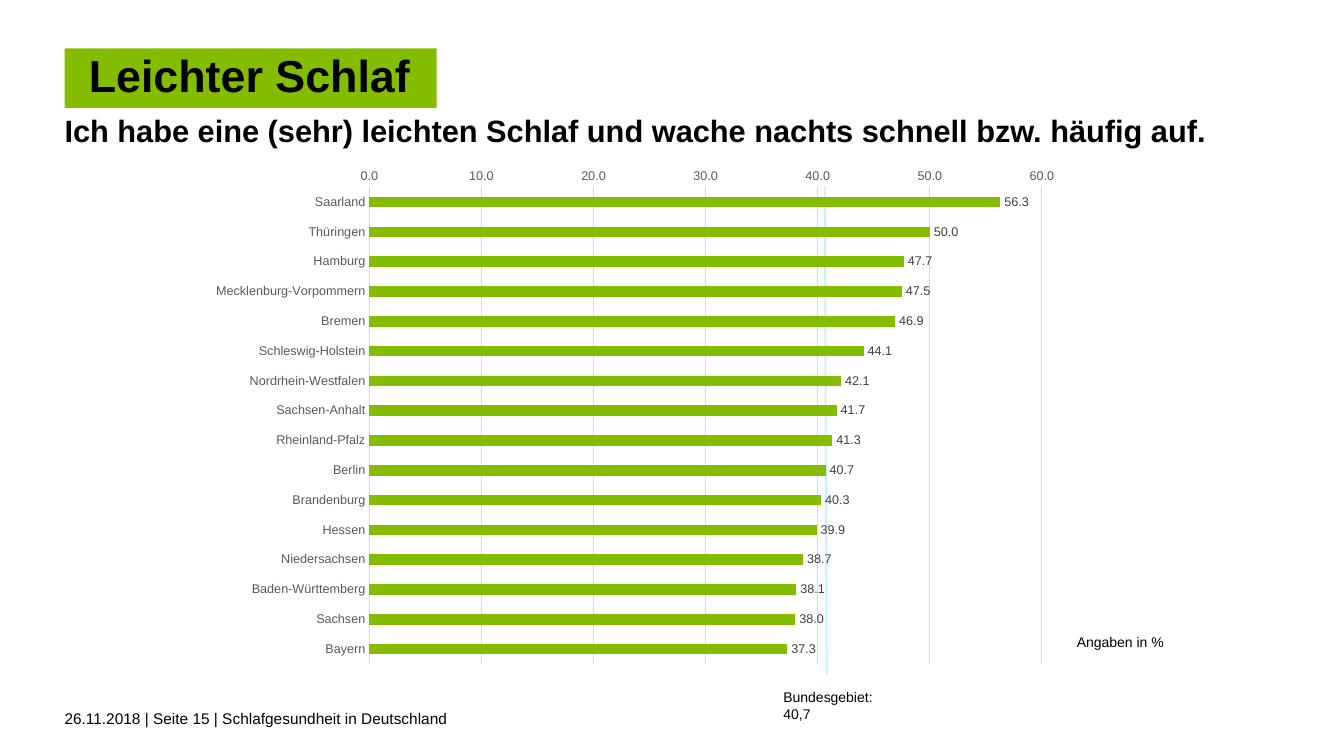
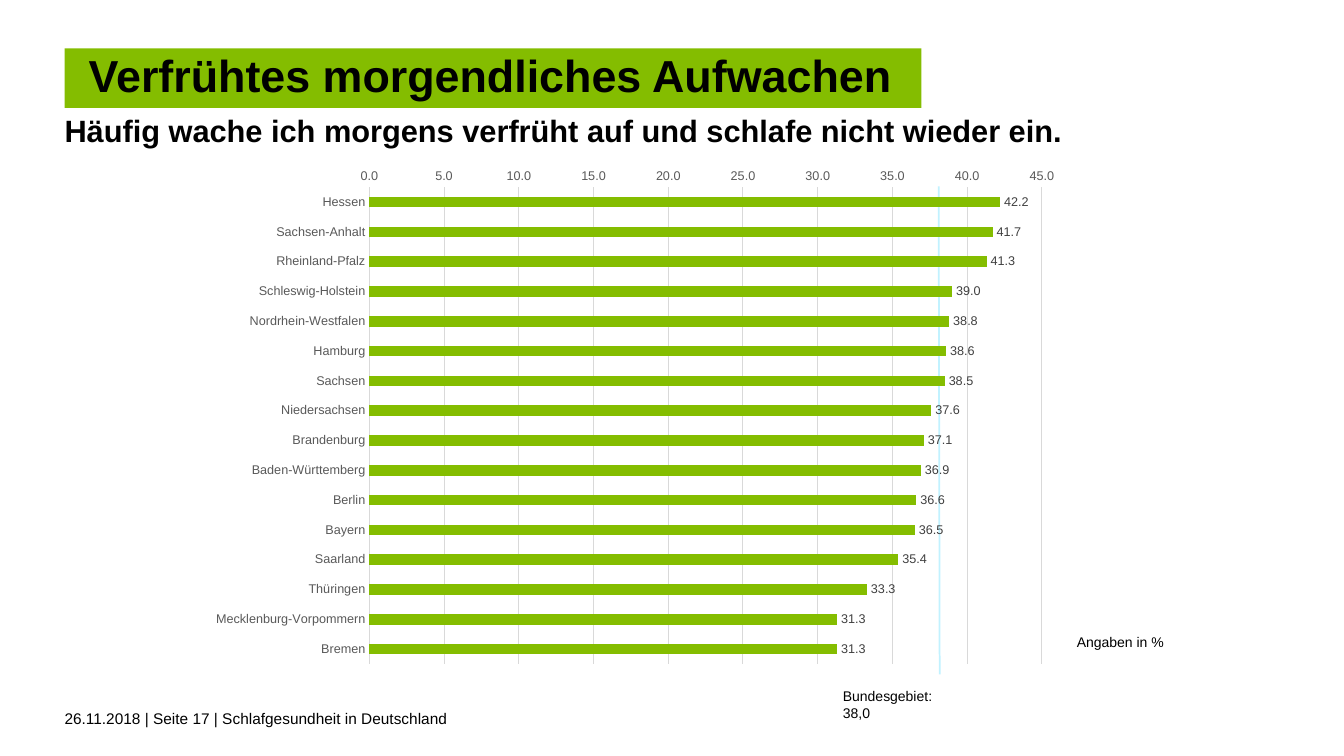
from dataclasses import dataclass

import pptx
import pptx.chart.data
import pptx.dml.color
import pptx.enum.chart
import pptx.enum.shapes
import pptx.enum.text
import pptx.oxml
import pptx.oxml.ns
import pptx.util
from pptx.util import Inches

FONT = "Arial"
BLACK, GREEN, CYAN = "000000", "84BD00", "C1F2FF"
GRID_GREY, AXIS_GREY, LABEL_GREY = "D9D9D9", "595959", "404040"
LEFT = 0.64
INSET = 0.24


@dataclass
class Survey:
    title: str
    title_width: float
    statement: str
    page: int
    values: dict[str, float]
    axis_max: float
    axis_step: float
    mean: str
    mean_line: tuple[float, float]
    mean_label: tuple[float, float]


SURVEYS = [
    Survey(
        "Leichter Schlaf", 3.69,
        "Ich habe eine (sehr) leichten Schlaf und wache nachts schnell bzw. häufig auf.",
        15,
        {
            "Saarland": 56.3, "Thüringen": 50, "Hamburg": 47.7,
            "Mecklenburg-Vorpommern": 47.5, "Bremen": 46.9,
            "Schleswig-Holstein": 44.1, "Nordrhein-Westfalen": 42.1,
            "Sachsen-Anhalt": 41.7, "Rheinland-Pfalz": 41.3, "Berlin": 40.7,
            "Brandenburg": 40.3, "Hessen": 39.9, "Niedersachsen": 38.7,
            "Baden-Württemberg": 38.1, "Sachsen": 38, "Bayern": 37.3,
        },
        60, 10, "40,7", (8.18, 8.2), (7.53, 6.78),
    ),
    Survey(
        "Verfrühtes morgendliches Aufwachen", 8.5,
        "Häufig wache ich morgens verfrüht auf und schlafe nicht wieder ein.",
        17,
        {
            "Hessen": 42.2, "Sachsen-Anhalt": 41.7, "Rheinland-Pfalz": 41.3,
            "Schleswig-Holstein": 39, "Nordrhein-Westfalen": 38.8,
            "Hamburg": 38.6, "Sachsen": 38.5, "Niedersachsen": 37.6,
            "Brandenburg": 37.1, "Baden-Württemberg": 36.9, "Berlin": 36.6,
            "Bayern": 36.5, "Saarland": 35.4, "Thüringen": 33.3,
            "Mecklenburg-Vorpommern": 31.3, "Bremen": 31.3,
        },
        45, 5, "38,0", (9.31, 9.32), (8.12, 6.77),
    ),
]


def rgb(color: str) -> pptx.dml.color.RGBColor:
    return pptx.dml.color.RGBColor.from_string(color)


def set_font(font, size: float, color: str = BLACK, bold: bool = False) -> None:
    font.name, font.size, font.bold = FONT, pptx.util.Pt(size), bold
    font.color.rgb = rgb(color)


def set_line(line, color: str, width: float) -> None:
    line.color.rgb = rgb(color)
    line.width = pptx.util.Pt(width)


def add_text(s, text: str, x: float, y: float, w: float, h: float, size: float,
             bold: bool = False, inset: tuple[float, float] = (INSET, INSET),
             spacing=None):
    sp = s.shapes.add_textbox(Inches(x), Inches(y), Inches(w), Inches(h))
    tf = sp.text_frame
    tf.word_wrap = True
    tf.margin_left, tf.margin_right = map(Inches, inset)
    tf.margin_top = tf.margin_bottom = Inches(0.05)
    tf.text = text
    p = tf.paragraphs[0]
    p.line_spacing = spacing
    set_font(p.runs[0].font, size, bold=bold)
    return sp


def add_title(s, text: str, width: float) -> None:
    sp = add_text(s, text, LEFT, 0.48, width, 0.59, 32, bold=True, spacing=0.9)
    sp.text_frame.word_wrap = False
    sp.fill.solid()
    sp.fill.fore_color.rgb = rgb(GREEN)


def add_mean_line(s, x_top: float, x_bottom: float) -> None:
    line = s.shapes.add_connector(
        pptx.enum.shapes.MSO_CONNECTOR.STRAIGHT,
        Inches(x_top), Inches(1.85), Inches(x_bottom), Inches(6.69))
    set_line(line.line, CYAN, 1.25)
    line.element.spPr.append(pptx.oxml.parse_xml(
        f"<a:effectLst {pptx.oxml.ns.nsdecls('a')}/>"))


def clear_background(chart) -> None:
    """Let the mean line behind the chart show through."""
    chart.element.find(pptx.oxml.ns.qn("c:chart")).addnext(pptx.oxml.parse_xml(
        f"<c:spPr {pptx.oxml.ns.nsdecls('c', 'a')}>"
        "<a:noFill/><a:ln><a:noFill/></a:ln></c:spPr>"))


def add_bar_chart(s, survey: Survey) -> None:
    data = pptx.chart.data.CategoryChartData(number_format="0.0")
    data.categories = list(survey.values)
    data.add_series("Series 1", list(survey.values.values()))
    chart = s.shapes.add_chart(
        pptx.enum.chart.XL_CHART_TYPE.BAR_CLUSTERED,
        Inches(1.97), Inches(1.57), Inches(8.66), Inches(5.12), data).chart
    chart.has_legend = chart.has_title = False
    set_font(chart.font, 10)
    clear_background(chart)

    categories, scale = chart.category_axis, chart.value_axis
    for axis in (categories, scale):
        axis.major_tick_mark = pptx.enum.chart.XL_TICK_MARK.NONE
        axis.minor_tick_mark = pptx.enum.chart.XL_TICK_MARK.NONE
        set_font(axis.tick_labels.font, 9, AXIS_GREY)
    categories.reverse_order = True
    categories.has_major_gridlines = False
    set_line(categories.format.line, GRID_GREY, 0.75)
    scale.minimum_scale, scale.maximum_scale = 0, survey.axis_max
    scale.major_unit = survey.axis_step
    scale.has_major_gridlines = True
    set_line(scale.major_gridlines.format.line, GRID_GREY, 0.75)
    scale.format.line.fill.background()

    plot = chart.plots[0]
    plot.gap_width = 182
    plot.vary_by_categories = False
    bars = plot.series[0]
    bars.invert_if_negative = False
    bars.format.fill.solid()
    bars.format.fill.fore_color.rgb = rgb(GREEN)
    labels = bars.data_labels
    labels.show_value = True
    labels.position = pptx.enum.chart.XL_LABEL_POSITION.OUTSIDE_END
    set_font(labels.font, 9, LABEL_GREY)
    for numbers in (scale.tick_labels, labels):
        numbers.number_format = "0.0"
        numbers.number_format_is_linked = False


def add_survey_slide(prs, survey: Survey) -> None:
    s = prs.slides.add_slide(prs.slide_layouts[6])
    add_text(s, f"26.11.2018 | Seite {survey.page} | Schlafgesundheit in Deutschland",
             LEFT, 6.99, 8, 0.4, 11, inset=(0, 0.1))
    add_mean_line(s, *survey.mean_line)
    add_title(s, survey.title, survey.title_width)
    add_text(s, survey.statement, LEFT, 1.13, 12.05, 0.3, 22, bold=True,
             inset=(0, 0.1), spacing=pptx.util.Pt(21.6))
    add_text(s, "Angaben in %", 10.44, 6.24, 1.83, 0.27, 10)
    add_bar_chart(s, survey)
    add_text(s, f"Bundesgebiet: {survey.mean}", *survey.mean_label, 1.66, 0.27, 10)


def main() -> None:
    prs = pptx.Presentation()
    prs.slide_width, prs.slide_height = Inches(13.33), Inches(7.5)
    for survey in SURVEYS:
        add_survey_slide(prs, survey)
    prs.save("out.pptx")


if __name__ == "__main__":
    main()
